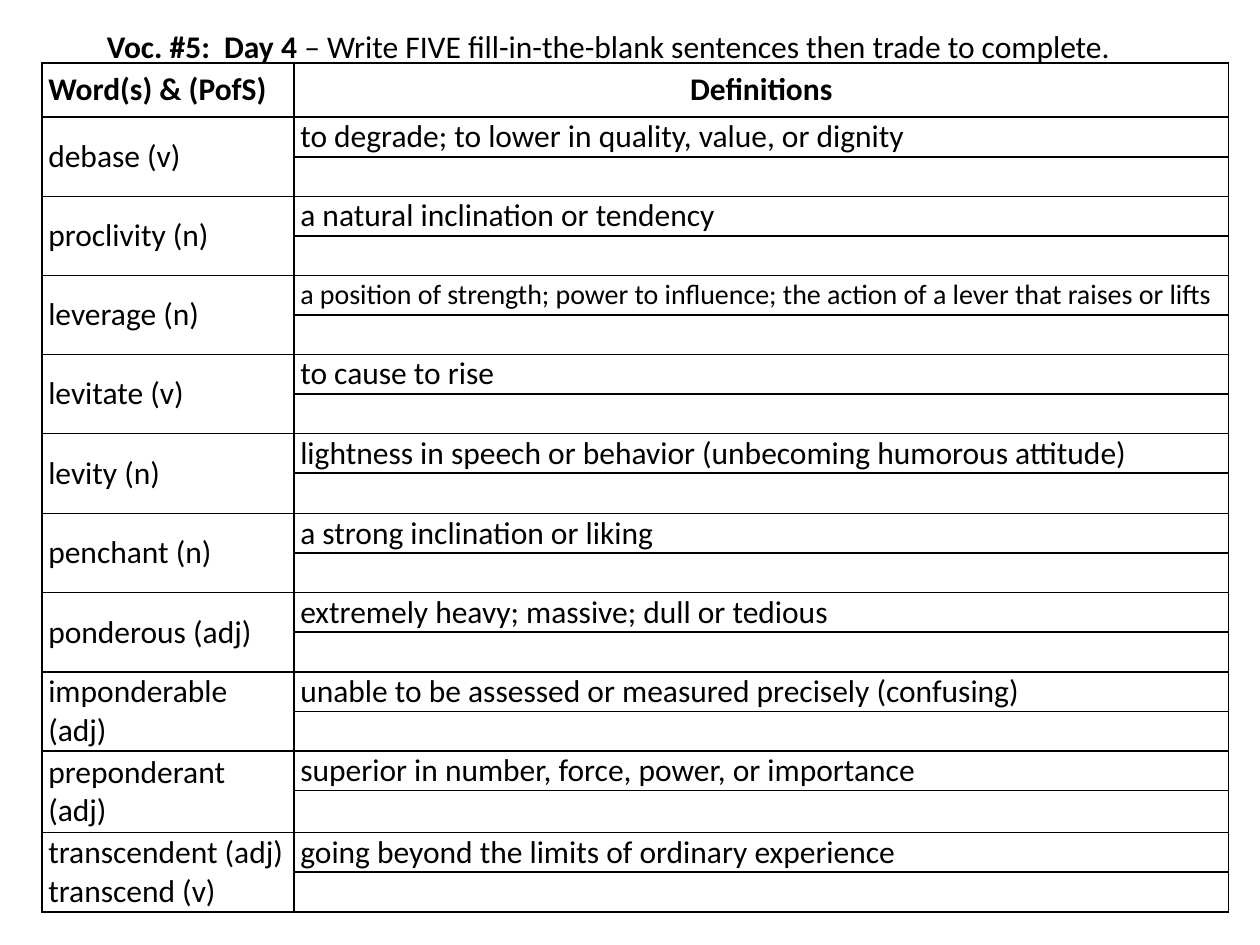
import pptx
import pptx.dml.color
import pptx.enum.text
import pptx.oxml
import pptx.oxml.ns
import pptx.util

Pt = pptx.util.Pt
ALIGN = pptx.enum.text.PP_ALIGN
MIDDLE = pptx.enum.text.MSO_ANCHOR.MIDDLE

VOCABULARY = [
    ("debase (v)", "to degrade; to lower in quality, value, or dignity"),
    ("proclivity (n)", "a natural inclination or tendency"),
    ("leverage (n)", "a position of strength; power to influence; "
                     "the action of a lever that raises or lifts"),
    ("levitate (v)", "to cause to rise"),
    ("levity (n)", "lightness in speech or behavior (unbecoming humorous attitude)"),
    ("penchant (n)", "a strong inclination or liking"),
    ("ponderous (adj)", "extremely heavy; massive; dull or tedious"),
    ("imponderable (adj)", "unable to be assessed or measured precisely (confusing)"),
    ("preponderant (adj)", "superior in number, force, power, or importance"),
    ("transcendent (adj)\ntranscend (v)", "going beyond the limits of ordinary experience"),
]
SMALL_SIZES = {"leverage (n)": 16}
COLUMN_WIDTHS = [144, 534]
HEADER_HEIGHT = 31
ROW_HEIGHT = 22.6
TALL_ROWS = {10: 23.2, 18: 24.2}


def color(value):
    return pptx.dml.color.RGBColor.from_string(value)


def apply(target, values):
    for name, value in values.items():
        setattr(target, name, value)


class SlideBuilder:
    font = "Calibri"
    ink = "000000"
    size = 18
    border = 1

    def __init__(self, slide):
        self.slide = slide

    def run(self, paragraph, text, bold=False, size=None):
        run = paragraph.add_run()
        run.text = text
        apply(run.font, {"name": self.font, "size": Pt(size or self.size), "bold": bold})
        run.font.color.rgb = color(self.ink)

    def text_box(self, left, top, width, height, runs, indent=0):
        shape = self.slide.shapes.add_textbox(Pt(left), Pt(top), Pt(width), Pt(height))
        apply(shape.text_frame, {
            "word_wrap": True,
            "vertical_anchor": MIDDLE,
            "auto_size": pptx.enum.text.MSO_AUTO_SIZE.SHAPE_TO_FIT_TEXT,
        })
        paragraph = shape.text_frame.paragraphs[0]
        # First-line indent has no public property
        paragraph._p.get_or_add_pPr().set("indent", str(Pt(indent)))
        for text, bold in runs:
            self.run(paragraph, text, bold)

    def table(self, left, top, widths, heights):
        frame = self.slide.shapes.add_table(
            len(heights), len(widths), Pt(left), Pt(top), Pt(sum(widths)), Pt(sum(heights)))
        table = frame.table
        apply(table, {"first_row": False, "horz_banding": False})
        for column, width in zip(table.columns, widths):
            column.width = Pt(width)
        for row, height in zip(table.rows, heights):
            row.height = Pt(height)
        for cell in table.iter_cells():
            apply(cell, {
                "margin_left": Pt(3.6), "margin_right": Pt(3.6),
                "margin_top": 0, "margin_bottom": 0, "vertical_anchor": MIDDLE,
            })
            cell.fill.background()
            self.borders(cell)
        return table

    def borders(self, cell):
        properties = cell._tc.get_or_add_tcPr()
        for position, side in enumerate(("lnL", "lnR", "lnT", "lnB")):
            line = pptx.oxml.parse_xml(
                f'<a:{side} {pptx.oxml.ns.nsdecls("a")} w="{Pt(self.border)}">'
                f'<a:solidFill><a:srgbClr val="{self.ink}"/></a:solidFill></a:{side}>')
            properties.insert(position, line)

    def cell_text(self, cell, text, bold=False, size=None, align=ALIGN.LEFT):
        frame = cell.text_frame
        for index, line in enumerate(text.split("\n")):
            paragraph = frame.add_paragraph() if index else frame.paragraphs[0]
            paragraph.alignment = align
            self.run(paragraph, line, bold, size)


def main():
    presentation = pptx.Presentation()
    apply(presentation, {"slide_width": Pt(720), "slide_height": Pt(540)})
    builder = SlideBuilder(presentation.slides.add_slide(presentation.slide_layouts[6]))

    # Vocabulary table: each word spans a definition row and a blank row
    heights = [HEADER_HEIGHT] + [
        TALL_ROWS.get(row, ROW_HEIGHT) for row in range(1, 2 * len(VOCABULARY) + 1)]
    table = builder.table(24, 36, COLUMN_WIDTHS, heights)
    builder.cell_text(table.cell(0, 0), "Word(s) & (PofS)", bold=True)
    builder.cell_text(table.cell(0, 1), "Definitions", bold=True, align=ALIGN.CENTER)
    for index, (word, definition) in enumerate(VOCABULARY):
        row = 2 * index + 1
        table.cell(row, 0).merge(table.cell(row + 1, 0))
        builder.cell_text(table.cell(row, 0), word)
        builder.cell_text(table.cell(row, 1), definition, size=SMALL_SIZES.get(word))

    # Title
    builder.text_box(18, 12, 636, 29, [
        ("Voc. #5:  Day 4 ", True),
        ("– Write FIVE fill-in-the-blank sentences then trade to complete.", False),
    ], indent=36)

    presentation.save("out.pptx")


if __name__ == "__main__":
    main()
